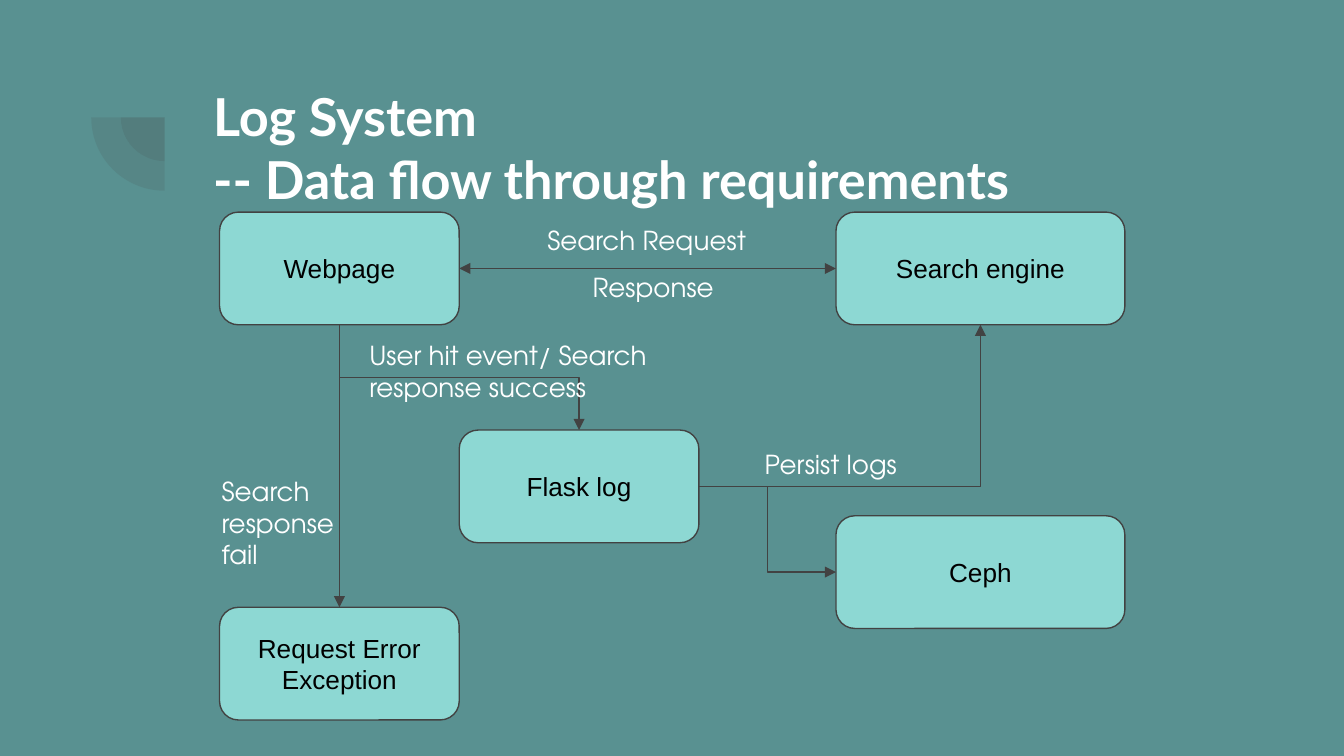
"""Build the log system data flow slide."""
from typing import NamedTuple

from lxml import etree
from pptx import Presentation, util as u
from pptx.dml.color import RGBColor
from pptx.enum import shapes, text
from pptx.oxml import ns

DARK, MINT, WHITE, BLACK = "424242", "8DD8D3", "FFFFFF", "000000"
TOP, LEFT, BOTTOM, RIGHT = range(4)
ROW = 2.13


class Box(NamedTuple):
    name: str
    x: float
    y: float
    w: float


class Label(NamedTuple):
    words: str
    x: float
    y: float
    w: float
    h: float = 1.3
    align: text.PP_ALIGN = text.PP_ALIGN.LEFT


class Flow(NamedTuple):
    start: str
    side: int
    end: str
    goal: int
    form: str = "bentConnector3"
    both: bool = False


BOXES = [
    Box("Webpage", 4.15, 4.01, 4.53),
    Box("Flask log", 8.68, 8.13, 4.53),
    Box("Search engine", 15.8, 4.01, 5.46),
    Box("Ceph", 15.8, 9.75, 5.46),
    Box("Request Error Exception", 4.15, 11.48, 4.53),
]
FLOWS = [
    Flow("Webpage", BOTTOM, "Flask log", TOP),
    Flow("Webpage", RIGHT, "Search engine", LEFT, both=True),
    Flow("Flask log", RIGHT, "Ceph", LEFT),
    Flow("Flask log", RIGHT, "Search engine", BOTTOM, "bentConnector2"),
    Flow("Webpage", BOTTOM, "Request Error Exception", TOP, "line"),
]
LABELS = [
    Label("Search Request", 8.48, 3.99, 7.49, align=text.PP_ALIGN.CENTER),
    Label("Response", 10.95, 4.88, 4.32),
    Label("User hit event/ Search response success", 6.73, 6.17, 6.86),
    Label("Search response fail", 3.94, 8.74, 3.15, ROW),
    Label("Persist logs", 14.2, 8.23, 4.32),
]


def paint(part, code: str) -> None:
    """Give a fill or font a solid colour from a hex string."""
    if hasattr(part, "solid"):
        part.solid()
        part.fore_color.rgb = RGBColor.from_string(code)
    else:
        part.color.rgb = RGBColor.from_string(code)


def write(shape, words: str, face: str, code: str, size: int = 14,
          align: text.PP_ALIGN = text.PP_ALIGN.LEFT, bold: bool = False) -> None:
    """Write one paragraph for each line of words."""
    frame = shape.text_frame
    frame.word_wrap = True
    frame.margin_left = frame.margin_right = u.Cm(0.25)
    frame.margin_top = frame.margin_bottom = u.Cm(0.25)
    frame.text = words
    for para in frame.paragraphs:
        para.alignment = align
        para.font.name, para.font.size, para.font.bold = face, u.Pt(size), bold
        paint(para.font, code)


def draw_pie(slide, size: float) -> None:
    """Draw a faint quarter disc about the shared centre."""
    pie = slide.shapes.add_shape(
        shapes.MSO_SHAPE.PIE, u.Cm(3.11 - size / 2), u.Cm(2.22 - size / 2),
        u.Cm(size), u.Cm(size))
    pie.adjustments[0], pie.adjustments[1] = 108, 162
    pie.rotation = 270
    pie.shadow.inherit = False
    pie.line.fill.background()
    paint(pie.fill, DARK)
    tint = pie.fill._xPr.find(".//" + ns.qn("a:srgbClr"))
    etree.SubElement(tint, ns.qn("a:alpha"), val="13000")


def draw_box(slide, box: Box):
    """Draw a rounded box with its name and return it."""
    shape = slide.shapes.add_shape(
        shapes.MSO_SHAPE.ROUNDED_RECTANGLE,
        u.Cm(box.x), u.Cm(box.y), u.Cm(box.w), u.Cm(ROW))
    shape.shadow.inherit = False
    paint(shape.fill, MINT)
    paint(shape.line, DARK)
    shape.line.width = u.Pt(0.75)
    shape.text_frame.vertical_anchor = text.MSO_ANCHOR.MIDDLE
    write(shape, box.name, "Arial", BLACK, align=text.PP_ALIGN.CENTER)
    return shape


def turn(link) -> None:
    """Turn an elbow so that it leaves downwards."""
    wide, high = link.width, link.height
    mid_x, mid_y = link.left + wide // 2, link.top + high // 2
    link.left, link.top = mid_x - high // 2, mid_y - wide // 2
    link.width, link.height = high, wide
    frame = link._element.spPr.find(ns.qn("a:xfrm"))
    frame.set("rot", "16200000")
    frame.set("flipH", "1")


def draw_flow(slide, flow: Flow, nodes: dict) -> None:
    """Join two boxes with an arrow."""
    link = slide.shapes.add_connector(shapes.MSO_CONNECTOR.ELBOW, 0, 0, 0, 0)
    link.begin_connect(nodes[flow.start], flow.side)
    link.end_connect(nodes[flow.end], flow.goal)
    props = link._element.spPr
    props.find(ns.qn("a:prstGeom")).set("prst", flow.form)
    if flow.side == BOTTOM and flow.form != "line":
        turn(link)
    paint(link.line, DARK)
    link.line.width = u.Pt(0.75)
    stroke = props.find(ns.qn("a:ln"))
    for tip in ["headEnd", "tailEnd"] if flow.both else ["tailEnd"]:
        etree.SubElement(stroke, ns.qn("a:" + tip), type="triangle")
    etree.SubElement(props, ns.qn("a:effectLst"))


def add_text(slide, label: Label):
    """Add an empty text box in the place of a label."""
    return slide.shapes.add_textbox(
        u.Cm(label.x), u.Cm(label.y), u.Cm(label.w), u.Cm(label.h))


def main() -> None:
    """Build and save the slide."""
    deck = Presentation()
    deck.slide_width, deck.slide_height = u.Cm(25.4), u.Cm(14.29)
    slide = deck.slides.add_slide(deck.slide_layouts[6])
    paint(slide.background.fill, "599191")
    for size in (1.65, 2.77):
        draw_pie(slide, size)
    title = Label("Log System\n-- Data flow through requirements",
                  3.78, 1.35, 19.53, 1.73)
    write(add_text(slide, title), title.words, "Lato", WHITE, 28, bold=True)
    nodes = {box.name: draw_box(slide, box) for box in BOXES}
    for flow in FLOWS:
        draw_flow(slide, flow, nodes)
    for label in LABELS:
        write(add_text(slide, label), label.words, "TeX Gyre Adventor", WHITE,
              align=label.align)
    deck.save("out.pptx")


if __name__ == "__main__":
    main()
